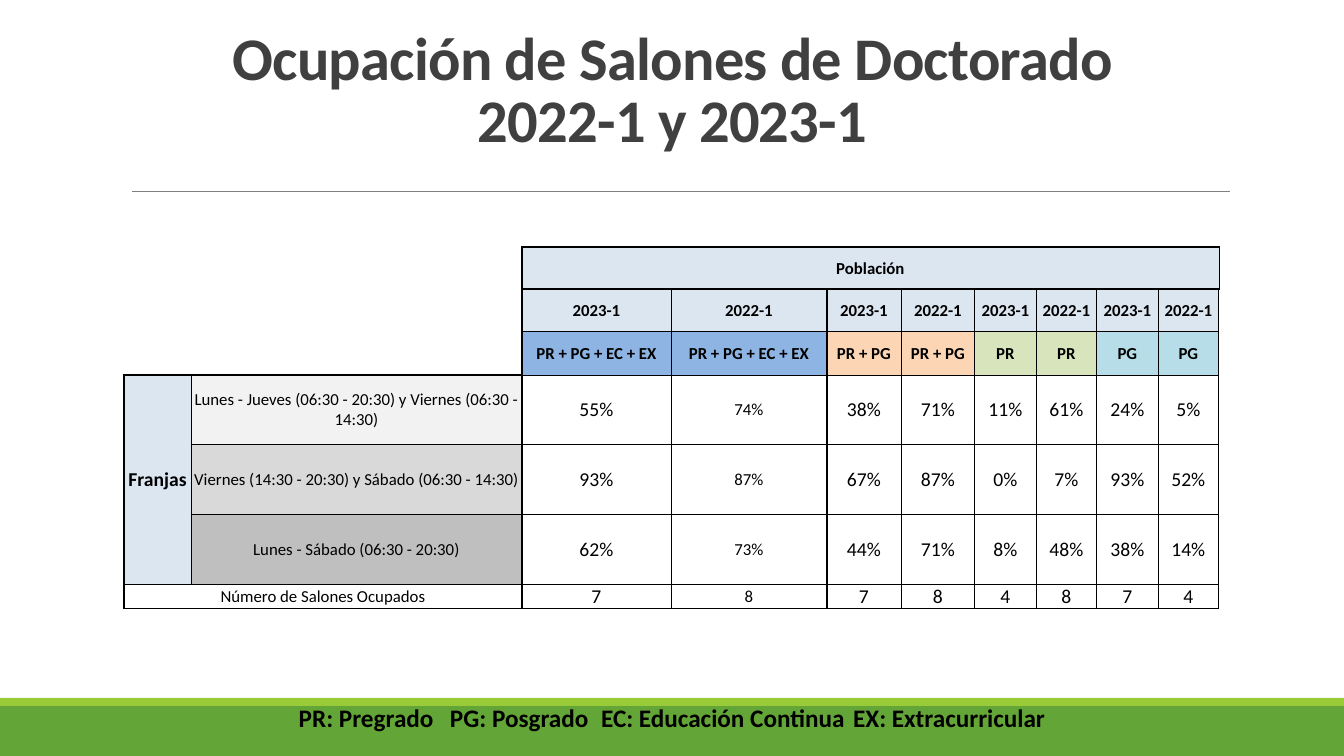
from dataclasses import dataclass

from lxml import etree
from pptx import Presentation
from pptx.dml.color import RGBColor
from pptx.enum.shapes import MSO_CONNECTOR, MSO_SHAPE
from pptx.enum.text import MSO_ANCHOR, MSO_AUTO_SIZE, PP_ALIGN
from pptx.oxml.ns import qn
from pptx.util import Emu, Pt

CENTER, MIDDLE, BOTTOM = PP_ALIGN.CENTER, MSO_ANCHOR.MIDDLE, MSO_ANCHOR.BOTTOM
NO_AUTOFIT = MSO_AUTO_SIZE.NONE
RECTANGLE, STRAIGHT = MSO_SHAPE.RECTANGLE, MSO_CONNECTOR.STRAIGHT

# Content
TITLE = "Ocupación de Salones de Doctorado\v2022-1 y 2023-1"
LEGEND = "PR: Pregrado\tPG: Posgrado\tEC: Educación Continua\tEX: Extracurricular"
POPULATION = "Población"
SLOTS = "Franjas"
TERMS = ("2023-1", "2022-1")
GROUPS = [("PR + PG + EC + EX", "8DB4E2"), ("PR + PG", "FCD5B4"),
          ("PR", "D8E4BC"), ("PG", "B7DEE8")]
OCCUPANCY = [
    ("Lunes - Jueves (06:30 - 20:30) y Viernes (06:30 - 14:30)", "F2F2F2",
     (55, 74, 38, 71, 11, 61, 24, 5)),
    ("Viernes (14:30 - 20:30) y Sábado (06:30 - 14:30)", "D9D9D9",
     (93, 87, 67, 87, 0, 7, 93, 52)),
    ("Lunes - Sábado (06:30 - 20:30)", "BFBFBF",
     (62, 73, 44, 71, 8, 48, 38, 14)),
]
ROOMS_LABEL = "Número de Salones Ocupados"
ROOMS = (7, 8, 7, 8, 4, 8, 7, 4)

# Layout in px
SLIDE = (1344, 756)
TITLE_BOX = (93, 51, 1159, 109)
LEGEND_BOX = (207, 697, 930, 40)
RULE = (132, 191, 1230, 191)
TABLE_AT = (124, 247)
COLUMNS = (67, 331, 149, 156, 74, 74, 61, 61, 61, 61)
ROWS = (42, 42, 44, 69, 70, 70, 25)
HEADER_ROWS, LABEL_COLUMNS = 3, 2
TOTAL_ROW = len(ROWS) - 1
SMALL_VALUES_COLUMN = 3


@dataclass(frozen=True)
class Theme:
    font: str = "Calibri"
    ink: str = "000000"
    title: str = "404040"
    paper: str = "FFFFFF"
    header: str = "DCE6F1"
    rule: str = "808080"
    band: str = "63A537"
    band_edge: str = "99CB38"
    title_size: float = 43.2
    legend_size: float = 18
    value_size: float = 14
    label_size: float = 12
    thick: float = 1
    thin: float = 0.5


THEME = Theme()


def px(*lengths):
    return [Emu(round(length * 914400 / 100.8)) for length in lengths]


def style(frame, size, color=THEME.ink, bold=False):
    for paragraph in frame.paragraphs:
        paragraph.alignment = CENTER
        for run in paragraph.runs:
            font = run.font
            font.name, font.size, font.bold = THEME.font, Pt(size), bold
            font.color.rgb = RGBColor.from_string(color)


def add_band(slide, top, bottom, color):
    band = slide.shapes.add_shape(RECTANGLE, *px(0, top, SLIDE[0], bottom - top))
    band.shadow.inherit = False
    band.fill.solid()
    band.fill.fore_color.rgb = RGBColor.from_string(color)
    band.line.fill.background()


def add_rule(slide):
    rule = slide.shapes.add_connector(STRAIGHT, *px(*RULE))
    rule.line.color.rgb = RGBColor.from_string(THEME.rule)
    rule.line.width = Pt(THEME.thin)
    etree.SubElement(rule._element.spPr, qn("a:effectLst"))


def add_title(slide):
    title = slide.shapes.title
    title.left, title.top, title.width, title.height = px(*TITLE_BOX)
    frame = title.text_frame
    frame.text = TITLE
    frame.auto_size, frame.vertical_anchor = NO_AUTOFIT, BOTTOM
    style(frame, THEME.title_size, THEME.title, bold=True)
    frame.paragraphs[0].line_spacing = 0.85
    for run in frame.paragraphs[0].runs:
        run.font._element.set("spc", "-50")


def add_legend(slide):
    frame = slide.shapes.add_textbox(*px(*LEGEND_BOX)).text_frame
    frame.word_wrap = True
    frame.text = LEGEND
    style(frame, THEME.legend_size, bold=True)


def region(row, column):
    """Name the block a cell belongs to; no border runs inside a block."""
    if row < HEADER_ROWS and column < LABEL_COLUMNS:
        return "corner"
    if row == 0:
        return POPULATION
    if row == TOTAL_ROW and column < LABEL_COLUMNS:
        return ROOMS_LABEL
    if column == 0:
        return SLOTS
    return row, column


def cell_content(row, column):
    """Return text, fill, size and bold of a cell."""
    block = region(row, column)
    if block == "corner":
        return "", THEME.paper, THEME.label_size, False
    if block == POPULATION:
        return POPULATION, THEME.header, THEME.label_size, True
    if block == SLOTS:
        return SLOTS, THEME.header, THEME.value_size, True
    if block == ROOMS_LABEL:
        return ROOMS_LABEL, THEME.paper, THEME.label_size, False
    place = column - LABEL_COLUMNS
    if row == 1:
        return TERMS[place % 2], THEME.header, THEME.label_size, True
    if row == 2:
        return *GROUPS[place // 2], THEME.label_size, True
    size = THEME.label_size if column == SMALL_VALUES_COLUMN else THEME.value_size
    if row == TOTAL_ROW:
        return str(ROOMS[place]), THEME.paper, size, False
    label, shade, shares = OCCUPANCY[row - HEADER_ROWS]
    if column < LABEL_COLUMNS:
        return label, shade, THEME.label_size, False
    return f"{shares[place]}%", THEME.paper, size, False


def add_borders(cell, row, column):
    thick_rows = {0, 1, len(ROWS)} | ({HEADER_ROWS} if column < LABEL_COLUMNS else set())
    block = region(row, column)
    sides = [("L", 0, -1, column % 2 == 0), ("R", 0, 1, column % 2 == 1),
             ("T", -1, 0, row in thick_rows), ("B", 1, 0, row + 1 in thick_rows)]
    for side, down, right, is_thick in sides:
        r, c = row + down, column + right
        inside = 0 <= r < len(ROWS) and 0 <= c < len(COLUMNS)
        drawn = (block != region(r, c) if inside else block != "corner")
        line = etree.SubElement(cell._tc.get_or_add_tcPr(), qn(f"a:ln{side}"))
        if drawn or cell.is_merge_origin:
            line.set("w", str(Pt(THEME.thick if is_thick else THEME.thin)))
            fill = etree.SubElement(line, qn("a:solidFill"))
            etree.SubElement(fill, qn("a:srgbClr")).set("val", THEME.ink)
        else:
            etree.SubElement(line, qn("a:noFill"))


def add_occupancy_table(slide):
    table = slide.shapes.add_table(len(ROWS), len(COLUMNS), *px(
        *TABLE_AT, sum(COLUMNS), sum(ROWS))).table
    table.first_row = table.horz_banding = False
    for column, width in zip(table.columns, px(*COLUMNS)):
        column.width = width
    for row, height in zip(table.rows, px(*ROWS)):
        row.height = height
    table.cell(0, LABEL_COLUMNS).merge(table.cell(0, len(COLUMNS) - 1))
    table.cell(HEADER_ROWS, 0).merge(table.cell(TOTAL_ROW - 1, 0))
    table.cell(TOTAL_ROW, 0).merge(table.cell(TOTAL_ROW, LABEL_COLUMNS - 1))
    for row in range(len(ROWS)):
        for column in range(len(COLUMNS)):
            cell = table.cell(row, column)
            text, shade, size, bold = cell_content(row, column)
            add_borders(cell, row, column)
            cell.fill.solid()
            cell.fill.fore_color.rgb = RGBColor.from_string(shade)
            cell.vertical_anchor = MIDDLE
            (cell.margin_left, cell.margin_top,
             cell.margin_right, cell.margin_bottom) = px(1, 1, 1, 0)
            if not cell.is_spanned:
                cell.text_frame.text = text
                style(cell.text_frame, size, bold=bold)


def main():
    deck = Presentation()
    deck.slide_width, deck.slide_height = px(*SLIDE)
    slide = deck.slides.add_slide(deck.slide_layouts[5])
    add_band(slide, 706, SLIDE[1], THEME.band)
    add_band(slide, 698, 706, THEME.band_edge)
    add_rule(slide)
    add_title(slide)
    add_legend(slide)
    add_occupancy_table(slide)
    deck.save("out.pptx")


if __name__ == "__main__":
    main()
